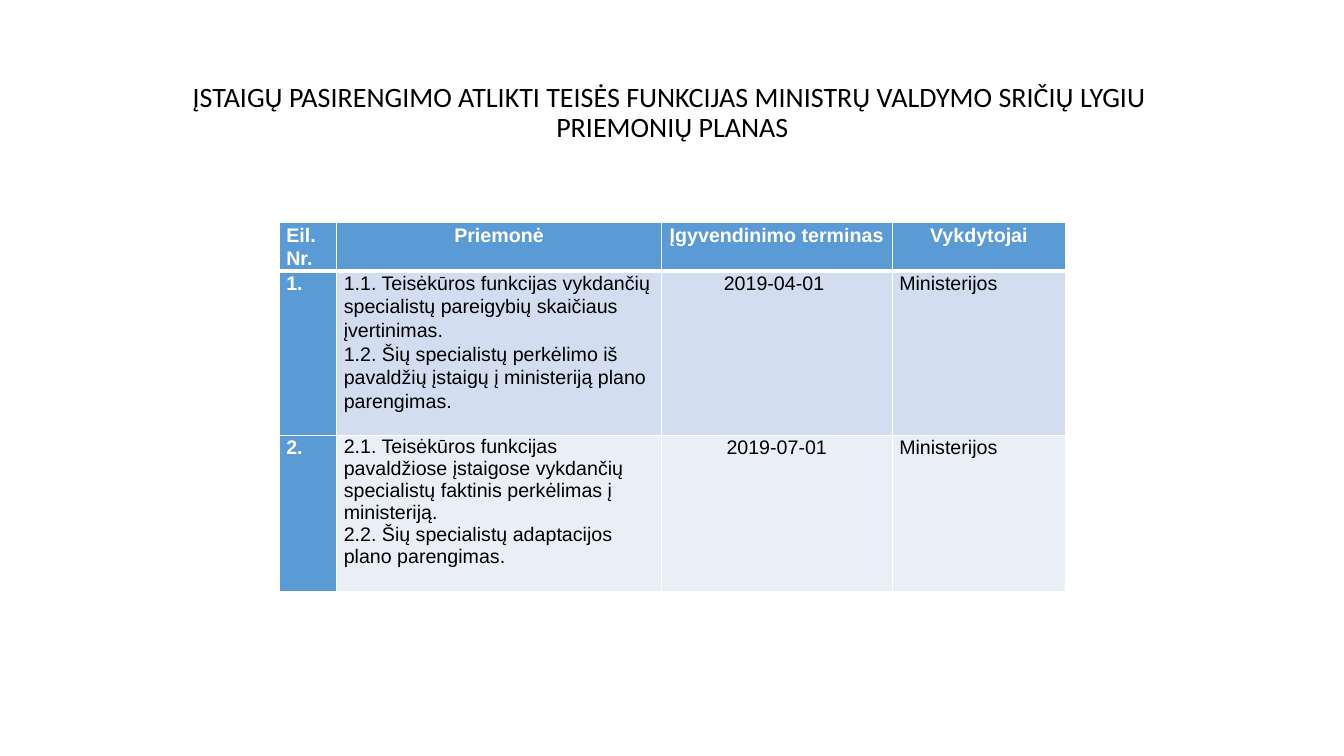
from dataclasses import dataclass

from lxml import etree
from pptx import Presentation, util as u
from pptx.dml.color import RGBColor
from pptx.enum import text
from pptx.oxml import ns


@dataclass(frozen=True)
class Theme:
    """Colours, fonts and type sizes of the slide."""
    white: str = "FFFFFF"
    black: str = "000000"
    accent: str = "5B9BD5"
    bands: tuple = ("D2DEEF", "EAEFF7")
    title_font: str = "Calibri"
    table_font: str = "Arial"
    title_size: int = 20
    table_size: int = 14


THEME = Theme()
WIDTH, HEIGHT = 13.33, 7.5
COLUMNS = (0.57, 3.22, 2.29, 1.72)
ROWS = (0.48, 1.63, 1.55)
CENTRED_COLUMN = 2
TITLE = "ĮSTAIGŲ PASIRENGIMO ATLIKTI TEISĖS FUNKCIJAS MINISTRŲ VALDYMO SRIČIŲ LYGIU \vPRIEMONIŲ PLANAS"
PLAN = (
    ("Eil. Nr.", "Priemonė", "Įgyvendinimo terminas", "Vykdytojai"),
    ("1.",
     "1.1. Teisėkūros funkcijas vykdančių specialistų pareigybių skaičiaus įvertinimas.\n"
     "1.2. Šių specialistų perkėlimo iš pavaldžių įstaigų į ministeriją plano parengimas.",
     "2019-04-01 ", "Ministerijos"),
    ("2.",
     "2.1. Teisėkūros funkcijas pavaldžiose įstaigose vykdančių specialistų faktinis perkėlimas į ministeriją.\n"
     "2.2. Šių specialistų adaptacijos plano parengimas.",
     "2019-07-01", "Ministerijos"),
)


def format_text(tf, font, size, color, bold, align, spacing):
    """Apply one style to every paragraph and run of a text frame."""
    for p in tf.paragraphs:
        p.alignment, p.line_spacing = align, spacing
        for r in p.runs:
            r.font.name, r.font.size, r.font.bold = font, u.Pt(size), bold
            r.font.color.rgb = RGBColor.from_string(color)


def add_border(cell, side, points):
    """Draw one white cell border."""
    ln = etree.SubElement(cell._tc.get_or_add_tcPr(), ns.qn(f"a:ln{side}"), w=str(u.Pt(points)))
    fill = etree.SubElement(ln, ns.qn("a:solidFill"))
    etree.SubElement(fill, ns.qn("a:srgbClr"), val=THEME.white)


def add_title(s, left, top, width, height):
    """Place the centred title in its box."""
    sp = s.shapes.title
    sp.left, sp.top, sp.width, sp.height = map(u.Inches, (left, top, width, height))
    tf = sp.text_frame
    tf.text = TITLE
    tf.word_wrap, tf.auto_size = True, text.MSO_AUTO_SIZE.NONE
    tf.vertical_anchor = text.MSO_ANCHOR.MIDDLE
    format_text(tf, THEME.title_font, THEME.title_size, THEME.black, False,
                text.PP_ALIGN.CENTER, 0.9)


def fill_cell(cell, value, row, col):
    """Write and style a cell according to its row and column."""
    heading = row == 0 or col == 0
    centred = col == CENTRED_COLUMN or (row == 0 and col > 0)
    cell.margin_left = cell.margin_right = u.Inches(0.07)
    cell.margin_top = cell.margin_bottom = 0
    cell.text_frame.text = value
    format_text(cell.text_frame, THEME.table_font, THEME.table_size,
                THEME.white if heading else THEME.black, heading,
                text.PP_ALIGN.CENTER if centred else text.PP_ALIGN.LEFT,
                1.0 if (row, col) == (2, 1) else 1.07)
    for side in "LRTB":
        header_rule = (row, side) in ((0, "B"), (1, "T"))
        add_border(cell, side, 3 if header_rule else 1)
    cell.fill.solid()
    cell.fill.fore_color.rgb = RGBColor.from_string(
        THEME.accent if heading else THEME.bands[row - 1])


def add_plan(s, left, top, width, height):
    """Place the table of measures in its box."""
    table = s.shapes.add_table(len(ROWS), len(COLUMNS),
                               *map(u.Inches, (left, top, width, height))).table
    for column, share in zip(table.columns, COLUMNS):
        column.width = u.Inches(width * share / sum(COLUMNS))
    for row, share in zip(table.rows, ROWS):
        row.height = u.Inches(height * share / sum(ROWS))
    for i, values in enumerate(PLAN):
        for j, value in enumerate(values):
            fill_cell(table.cell(i, j), value, i, j)


def main():
    """Build the slide and save it."""
    prs = Presentation()
    prs.slide_width, prs.slide_height = u.Inches(WIDTH), u.Inches(HEIGHT)
    s = prs.slides.add_slide(prs.slide_layouts[5])
    add_title(s, 0.92, 0.4, 11.5, 1.45)
    add_plan(s, 2.77, 2.21, sum(COLUMNS), sum(ROWS))
    prs.save("out.pptx")


if __name__ == "__main__":
    main()
